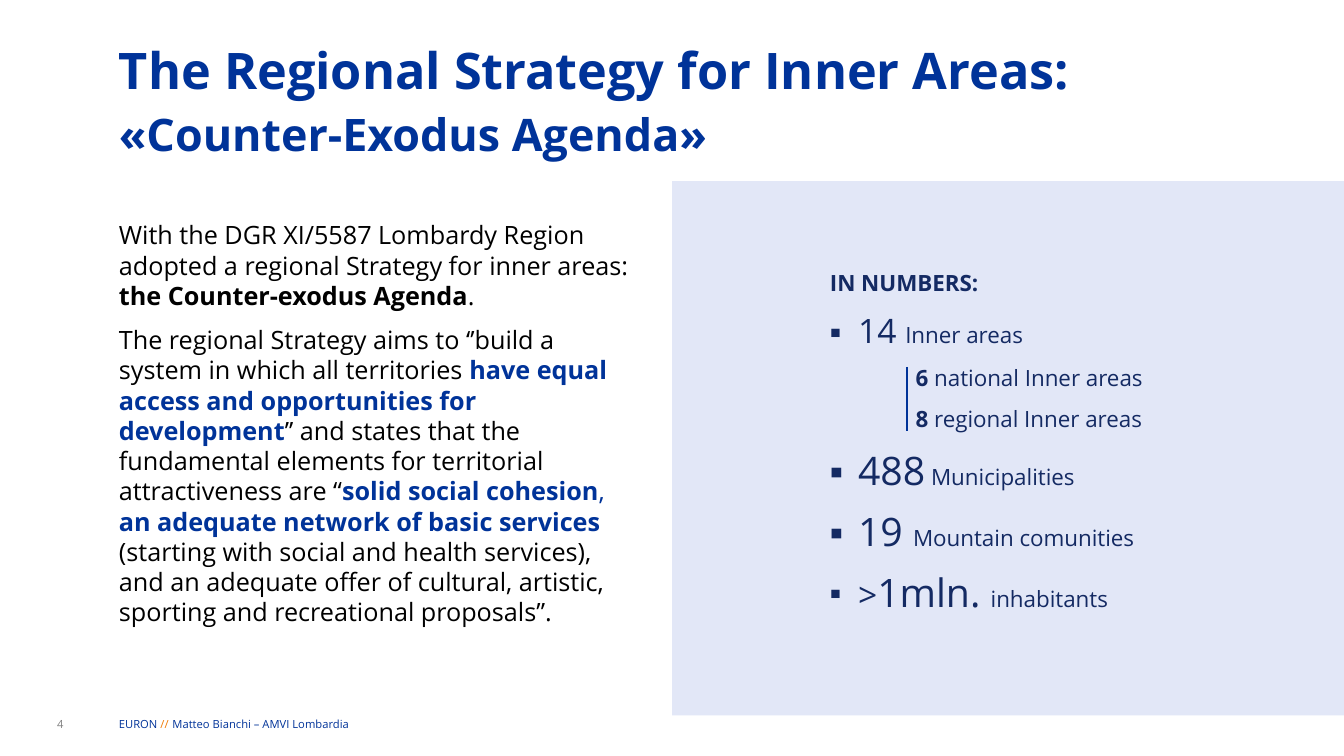
import pptx
import pptx.util
import pptx.dml.color
import pptx.enum.shapes
import pptx.enum.text
import pptx.oxml
import pptx.oxml.ns
from dataclasses import dataclass

ANCHOR = pptx.enum.text.MSO_ANCHOR
ALIGN = pptx.enum.text.PP_ALIGN
Pt = pptx.util.Pt
WIDTH, HEIGHT = pptx.util.Inches(13.333), pptx.util.Inches(7.5)


@dataclass(frozen=True)
class Theme:
    font: str = "Open Sans"
    blue: str = "003399"
    navy: str = "142A63"
    orange: str = "F17900"
    grey: str = "808080"
    black: str = "000000"
    panel: str = "E2E7F7"
    title: int = 36
    subtitle: int = 32
    body: int = 18
    label: int = 16
    figure: int = 24
    big_figure: int = 28
    footer: int = 8


THEME = Theme()
LEFT_MARGIN = 8.85
FOOTER_TOP, FOOTER_HEIGHT = 94.43, 2.67
BODY_SPACING = {"space_after": Pt(10), "line_spacing": 1.0}


def across(share):
    """Turn a percentage of the slide's width into a length."""
    return round(WIDTH * share / 100)


def down(share):
    """Turn a percentage of the slide's height into a length."""
    return round(HEIGHT * share / 100)


def place(left, top, width, height):
    return across(left), down(top), across(width), down(height)


def color(value):
    return pptx.dml.color.RGBColor.from_string(value)


def apply(target, formats):
    for name, value in formats.items():
        setattr(target, name, value)


def add_text_area(slide, area, anchor=ANCHOR.TOP, inset=0):
    frame = slide.shapes.add_textbox(*place(*area)).text_frame
    margins = {f"margin_{side}": pptx.util.Inches(inset)
               for side in ("left", "top", "right", "bottom")}
    apply(frame, {"word_wrap": True, "vertical_anchor": anchor, **margins})
    return frame


def add_run(paragraph, text, size, tint, bold=False):
    run = paragraph.add_run()
    run.text = text
    apply(run.font, {"name": THEME.font, "size": Pt(size), "bold": bold})
    run.font.color.rgb = color(tint)


def add_paragraph(frame, runs, formats):
    """Write runs of (text, size, colour, bold), starting with the empty first paragraph."""
    first = frame.paragraphs[0]
    paragraph = frame.add_paragraph() if first.runs else first
    apply(paragraph, formats)
    for run in runs:
        add_run(paragraph, *run)
    return paragraph


def indent(paragraph, margin, hanging=0):
    properties = paragraph._p.get_or_add_pPr()
    properties.set("marL", str(pptx.util.Inches(margin)))
    properties.set("indent", str(-pptx.util.Inches(hanging)))
    return properties


def add_bullet(paragraph):
    properties = indent(paragraph, 0.28, 0.28)
    namespace = pptx.oxml.ns.nsdecls("a")
    for markup in (
        f'<a:buClr {namespace}><a:srgbClr val="{THEME.navy}"/></a:buClr>',
        f'<a:buSzPct {namespace} val="85000"/>',
        f'<a:buFont {namespace} typeface="{THEME.font}"/>',
        f'<a:buChar {namespace} char="▪"/>',
    ):
        properties.append(pptx.oxml.parse_xml(markup))


def add_title(slide):
    frame = add_text_area(slide, (LEFT_MARGIN, 2.87, 79.73, 18.4), ANCHOR.BOTTOM)
    heading = add_paragraph(
        frame, [("The Regional Strategy for Inner Areas:", THEME.title, THEME.blue, True)],
        {"line_spacing": Pt(44)})
    heading.add_line_break()
    add_run(heading, "«Counter-Exodus Agenda»", THEME.subtitle, THEME.blue, True)


def add_strategy(slide):
    plain, strong = (THEME.body, THEME.black, False), (THEME.body, THEME.black, True)
    accent, accent_plain = (THEME.body, THEME.blue, True), (THEME.body, THEME.blue, False)
    adoption = [
        ("With the DGR XI/5587 Lombardy Region adopted a regional Strategy for inner areas: ",
         *plain),
        ("the Counter-exodus Agenda", *strong),
        (".", *plain),
    ]
    aims = [
        ("The regional Strategy aims to ‘’build a system in which all territories ", *plain),
        ("have equal access and opportunities for development", *accent),
        ("’’ and states that the fundamental elements for territorial attractiveness are “",
         *plain),
        ("solid social cohesion", *accent),
        (", ", *accent_plain),
        ("an adequate network of basic services ", *accent),
        ("(starting with social and health services), and an adequate offer of cultural, "
         "artistic, sporting and recreational proposals”.", *plain),
    ]
    frame = add_text_area(slide, (LEFT_MARGIN, 29.07, 38.78, 60.4))
    for runs in (adoption, aims):
        add_paragraph(frame, runs, BODY_SPACING)


def add_panel(slide):
    panel = slide.shapes.add_shape(
        pptx.enum.shapes.MSO_SHAPE.RECTANGLE, *place(50, 23.95, 50, 70.67))
    panel.shadow.inherit = False
    panel.fill.solid()
    panel.fill.fore_color.rgb = color(THEME.panel)
    panel.line.fill.background()


def add_numbers(slide):
    frame = add_text_area(slide, (59.65, 31.87, 40.35, 60.4), inset=0.28)

    def add_line(*parts):
        runs = [(text, size, THEME.navy, bold) for text, size, bold in parts]
        return add_paragraph(frame, runs, BODY_SPACING)

    def add_fact(label, *figures):
        add_bullet(add_line(*((text, size, False) for text, size in figures),
                            (label, THEME.label, False)))

    add_line(("IN NUMBERS:", THEME.label, True))
    add_fact("Inner areas", ("14 ", THEME.figure))
    for count, label in (("6 ", "national Inner areas"), ("8 ", "regional Inner areas")):
        indent(add_line((count, THEME.label, True), (label, THEME.label, False)), 0.85)
    add_fact(" Municipalities", ("488", THEME.big_figure))
    add_fact("Mountain comunities", ("19 ", THEME.big_figure))
    add_fact("inhabitants", (">", THEME.figure), ("1mln. ", THEME.big_figure))


def add_breakdown_rule(slide):
    x = across(67.5)
    rule = slide.shapes.add_connector(
        pptx.enum.shapes.MSO_CONNECTOR.STRAIGHT, x, down(48.53), x, down(57.07))
    rule.line.color.rgb = color(THEME.blue)
    rule.line.width = Pt(1.5)
    rule._element.spPr.append(pptx.oxml.parse_xml(
        f'<a:effectLst {pptx.oxml.ns.nsdecls("a")}/>'))


def add_footer(slide):
    items = (
        (0.9, 3.83, ALIGN.RIGHT, [("4", THEME.grey)]),
        (LEFT_MARGIN, 4.43, ALIGN.LEFT, [("EURON ", THEME.blue), ("//", THEME.orange)]),
        (12.83, 36, ALIGN.LEFT, [("Matteo Bianchi – AMVI Lombardia", THEME.blue)]),
    )
    for left, width, alignment, parts in items:
        frame = add_text_area(slide, (left, FOOTER_TOP, width, FOOTER_HEIGHT), ANCHOR.MIDDLE)
        add_paragraph(frame, [(text, THEME.footer, tint) for text, tint in parts],
                      {"alignment": alignment})


def main():
    presentation = pptx.Presentation()
    apply(presentation, {"slide_width": WIDTH, "slide_height": HEIGHT})
    slide = presentation.slides.add_slide(presentation.slide_layouts[6])
    for add_part in (add_title, add_strategy, add_panel, add_numbers,
                     add_breakdown_rule, add_footer):
        add_part(slide)
    presentation.save("out.pptx")


if __name__ == "__main__":
    main()
